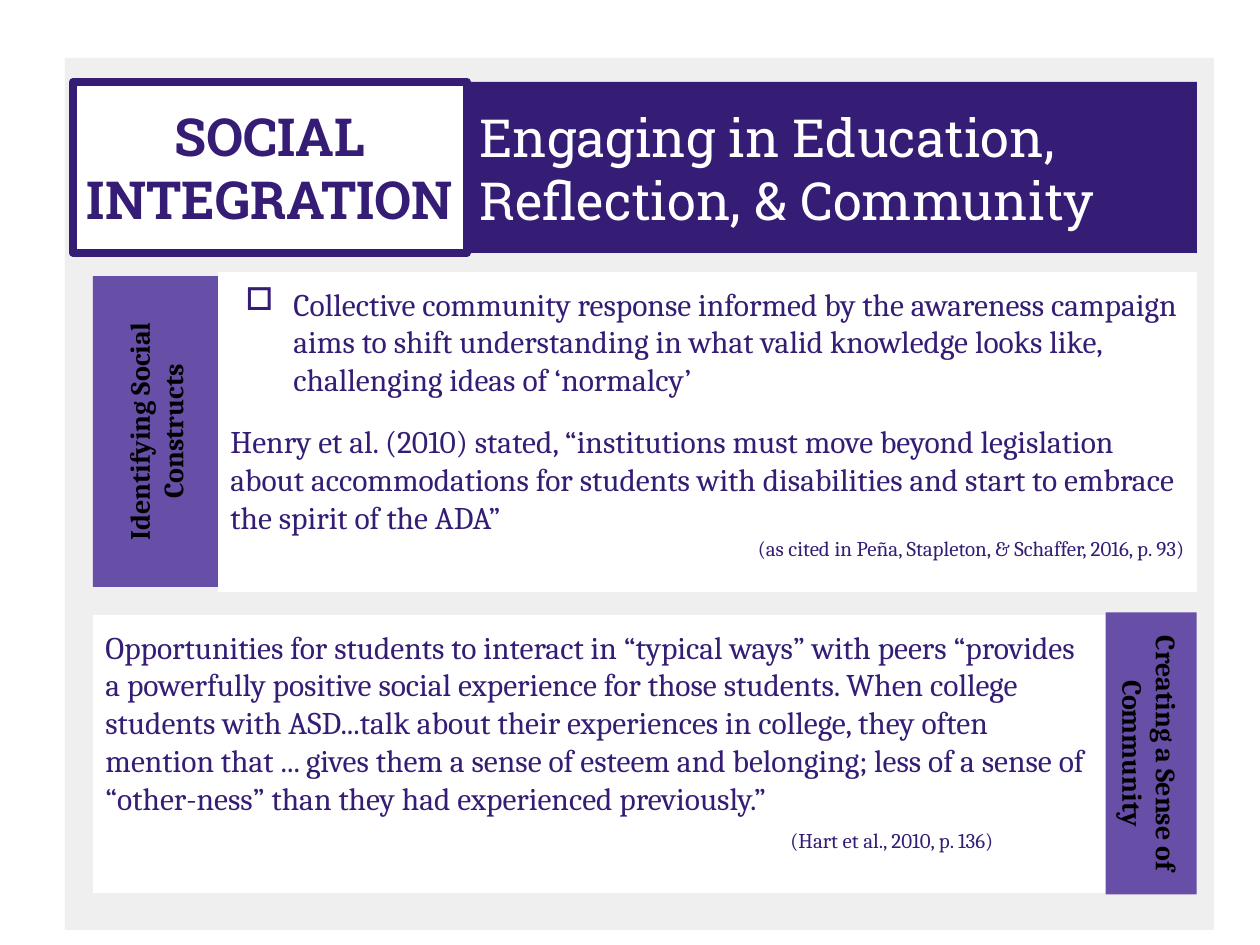
"""Build the Social Integration slide."""
from lxml import etree
from pptx import Presentation
from pptx import util as u
from pptx.dml.color import RGBColor
from pptx.enum import shapes, text
from pptx.oxml.ns import qn

PX = 914400 / 126
INDIGO = RGBColor(0x35, 0x1C, 0x75)
VIOLET = RGBColor(0x67, 0x4E, 0xA7)
GREY = RGBColor(0xEF, 0xEF, 0xEF)
WHITE = RGBColor(0xFF, 0xFF, 0xFF)
BLACK = RGBColor(0, 0, 0)

LEFT, CENTER, RIGHT = text.PP_ALIGN.LEFT, text.PP_ALIGN.CENTER, text.PP_ALIGN.RIGHT
TOP, MIDDLE = text.MSO_ANCHOR.TOP, text.MSO_ANCHOR.MIDDLE

HEADING = {"name": "Roboto Slab", "size": u.Pt(30), "bold": False}
LABEL = {"name": "Cambria", "size": u.Pt(16), "bold": True}
BODY = {"name": "Cambria", "size": u.Pt(18), "bold": False}
CITATION = {**BODY, "size": u.Pt(12)}

PANEL = (65, 58, 1149, 872)
TITLE = {
    "box": (73, 82, 394, 171), "fill": WHITE, "color": INDIGO, "anchor": MIDDLE,
    "paragraphs": [("SOCIAL INTEGRATION", {**HEADING, "bold": True}, CENTER, {})],
}
BLOCKS = [
    {"box": (93, 615, 1013, 278), "fill": WHITE, "color": INDIGO, "anchor": TOP,
     "paragraphs": [
         ("Opportunities for students to interact in “typical ways” with peers “provides a "
          "powerfully positive social experience for those students. When college students "
          "with ASD...talk about their experiences in college, they often mention that ... "
          "gives them a sense of esteem and belonging; less of a sense of “other-ness” than "
          "they had experienced previously.”", BODY, LEFT, {}),
         ("(Hart et al., 2010, p. 136)", CITATION, LEFT, {"indent": (685, 0), "before": 6}),
     ]},
    {"box": (0, 369, 311, 125), "fill": VIOLET, "color": BLACK, "anchor": MIDDLE,
     "rotation": 270,
     "paragraphs": [("Identifying Social Constructs", LABEL, CENTER, {})]},
    {"box": (1010, 708, 282, 91), "fill": VIOLET, "color": BLACK, "anchor": TOP,
     "rotation": 90,
     "paragraphs": [("Creating a Sense of Community", LABEL, CENTER, {})]},
    {"box": (218, 272, 979, 320), "fill": WHITE, "color": INDIGO, "anchor": TOP,
     "paragraphs": [
         ("Collective community response informed by the awareness campaign aims to shift "
          "understanding in what valid knowledge looks like, challenging ideas of "
          "‘normalcy’", BODY, LEFT, {"indent": (63, -48), "bullet": "□"}),
         ("Henry et al. (2010) stated, “institutions must move beyond legislation about "
          "accommodations for students with disabilities and start to embrace the spirit of "
          "the ADA”", BODY, LEFT, {"before": 14}),
         ("(as cited in Peña, Stapleton, & Schaffer, 2016, p. 93)", CITATION, RIGHT, {}),
     ]},
    {"box": (467, 82, 730, 171), "fill": INDIGO, "color": WHITE, "anchor": MIDDLE,
     "paragraphs": [
         ("Engaging in Education, Reflection, & Community", HEADING, LEFT, {})]},
]


def px(length):
    return u.Emu(round(length * PX))


def set_all(target, values):
    for key, value in values.items():
        setattr(target, key, value)


def paint(shape, fill):
    shape.fill.solid()
    shape.fill.fore_color.rgb = fill
    shape.line.fill.background()


def add_rect(slide, box, fill):
    rect = slide.shapes.add_shape(shapes.MSO_SHAPE.RECTANGLE, *map(px, box))
    rect.shadow.inherit = False
    paint(rect, fill)
    return rect


def write(shape, block):
    frame = shape.text_frame
    margin = u.Inches(0.1)
    set_all(frame, {
        "word_wrap": True, "auto_size": text.MSO_AUTO_SIZE.NONE,
        "vertical_anchor": block["anchor"], "margin_left": margin,
        "margin_right": margin, "margin_top": margin, "margin_bottom": margin})
    for index, (words, font, align, layout) in enumerate(block["paragraphs"]):
        paragraph = frame.add_paragraph() if index else frame.paragraphs[0]
        set_all(paragraph, {"alignment": align, "space_before": u.Pt(layout.get("before", 0))})
        run = paragraph.add_run()
        run.text = words
        set_all(run.font, font)
        run.font.color.rgb = block["color"]
        properties = paragraph._p.get_or_add_pPr()
        if "indent" in layout:
            for key, length in zip(("marL", "indent"), layout["indent"]):
                properties.set(key, str(px(length)))
        if "bullet" in layout:
            color = etree.SubElement(properties, qn("a:buClr"))
            etree.SubElement(color, qn("a:srgbClr"), val=str(block["color"]))
            etree.SubElement(properties, qn("a:buChar"), char=layout["bullet"])


def main():
    deck = Presentation()
    deck.slide_width, deck.slide_height = px(1260), px(945)
    slide = deck.slides.add_slide(deck.slide_layouts[5])

    panel = add_rect(slide, PANEL, GREY)
    title = slide.shapes.title
    panel._element.addnext(title._element)
    set_all(title, dict(zip(("left", "top", "width", "height"), map(px, TITLE["box"]))))
    paint(title, TITLE["fill"])
    title.line.color.rgb = INDIGO
    title.line.width = u.Pt(4.5)
    etree.SubElement(title.line._get_or_add_ln(), qn("a:round"))
    write(title, TITLE)

    for block in BLOCKS:
        rect = add_rect(slide, block["box"], block["fill"])
        rect.rotation = block.get("rotation", 0)
        write(rect, block)
    deck.save("out.pptx")


if __name__ == "__main__":
    main()
